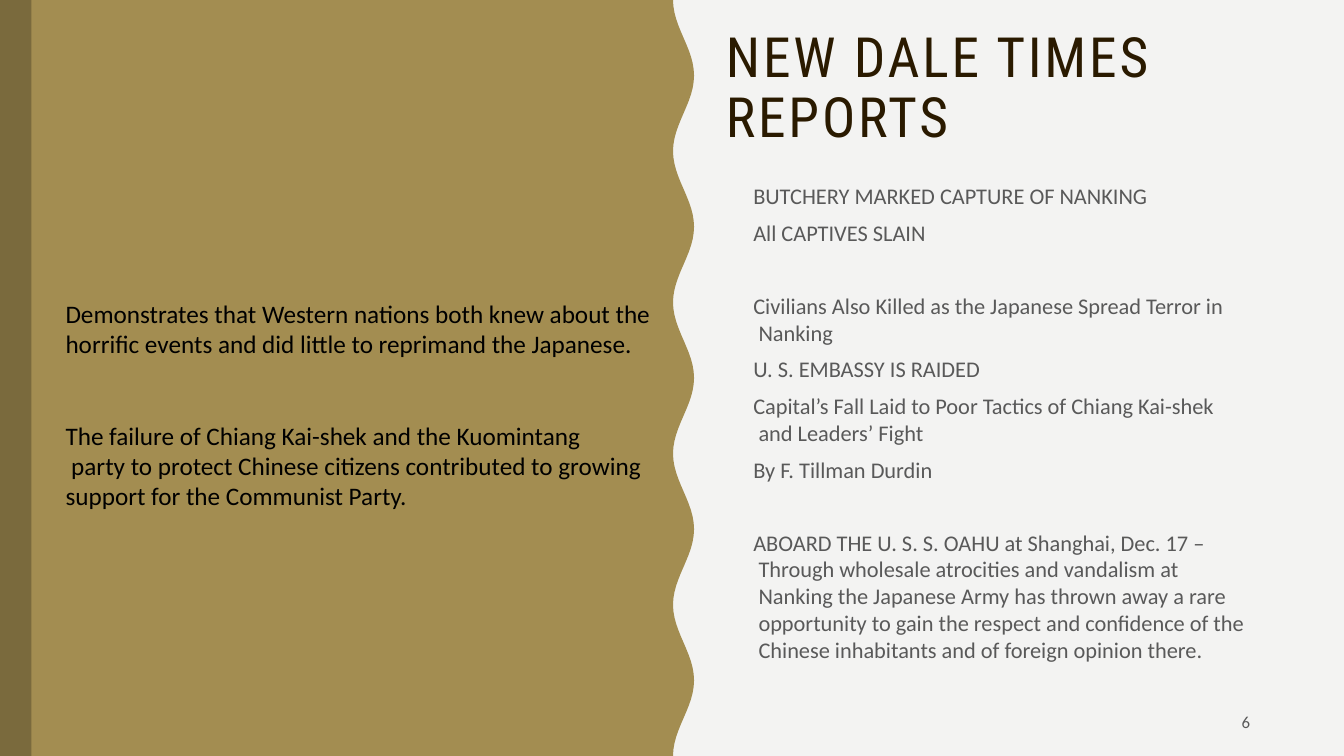
from math import cos, pi
from pptx import Presentation
from pptx.dml.color import RGBColor
from pptx.enum.shapes import MSO_SHAPE
from pptx.enum.text import MSO_ANCHOR, PP_ALIGN
from pptx.util import Pt

SCALE = 9525
WIDE, HIGH = 1280, 720
PAPER, GOLD, BROWN = "F3F3F2", "A38D51", "7A6A3D"
INK, GREY, BLACK = "2A1A00", "595959", "000000"


def px(size):
    return round(size * SCALE)


def tint(code):
    return RGBColor.from_string(code)


class Deck:
    font = "Calibri"

    def __init__(self):
        self.show = Presentation()
        self.show.slide_width = px(WIDE)
        self.show.slide_height = px(HIGH)
        self.slide = self.show.slides.add_slide(self.show.slide_layouts[6])
        back = self.slide.background.fill
        back.solid()
        back.fore_color.rgb = tint(PAPER)

    def paint(self, shape, color):
        shape.shadow.inherit = False
        shape.fill.solid()
        shape.fill.fore_color.rgb = tint(color)
        shape.line.fill.background()

    def rect(self, left, top, width, height, color):
        shape = self.slide.shapes.add_shape(
            MSO_SHAPE.RECTANGLE, px(left), px(top), px(width), px(height))
        self.paint(shape, color)

    def wave(self, low, high, count, step, color):
        span = HIGH / count
        edge = []
        for y in range(0, HIGH + 1, step):
            swing = (1 - cos(2 * pi * y / span)) / 2
            edge.append((px(low + (high - low) * swing), px(y)))
        path = self.slide.shapes.build_freeform(0, 0)
        path.add_line_segments(edge + [(0, px(HIGH))], close=True)
        self.paint(path.convert_to_shape(), color)

    def text(self, left, top, width, height, lines, size, color, font=None,
             anchor=MSO_ANCHOR.MIDDLE, align=PP_ALIGN.LEFT, after=0,
             lead=1.0, hang=0, track=0):
        box = self.slide.shapes.add_textbox(
            px(left), px(top), px(width), px(height))
        frame = box.text_frame
        frame.word_wrap = True
        frame.vertical_anchor = anchor
        for spot, (words, before) in enumerate(lines):
            para = frame.paragraphs[0] if spot == 0 else frame.add_paragraph()
            para.alignment = align
            para.line_spacing = lead
            para.space_before = Pt(before)
            para.space_after = Pt(after)
            if hang:
                props = para._p.get_or_add_pPr()
                props.set("marL", str(px(hang)))
                props.set("indent", str(-px(hang)))
            run = para.add_run()
            run.text = words
            run.font.name = font or self.font
            run.font.size = Pt(size)
            run.font.color.rgb = tint(color)
            if track:
                run._r.get_or_add_rPr().set("spc", str(track * 100))

    def save(self):
        self.show.save("out.pptx")


def main():
    deck = Deck()
    deck.wave(641, 661, 5, 6, GOLD)
    deck.rect(0, 0, 30, HIGH, BROWN)
    deck.text(682, 15, 585, 140, [("NEW DALE TIMES REPORTS", 0)], 39.6, INK,
              font="Roboto Condensed", lead=0.9, track=2)
    gap, rest = 7, 33
    news = [
        ("BUTCHERY MARKED CAPTURE OF NANKING", gap),
        ("All CAPTIVES SLAIN", gap),
        ("Civilians Also Killed as the Japanese Spread Terror in Nanking", rest),
        ("U. S. EMBASSY IS RAIDED", gap),
        ("Capital’s Fall Laid to Poor Tactics of Chiang Kai-shek "
         "and Leaders’ Fight", gap),
        ("By F. Tillman Durdin", gap),
        ("ABOARD THE U. S. S. OAHU at Shanghai, Dec. 17 – Through wholesale "
         "atrocities and vandalism at Nanking the Japanese Army has thrown "
         "away a rare opportunity to gain the respect and confidence of the "
         "Chinese inhabitants and of foreign opinion there.", rest),
    ]
    deck.text(708, 163, 492, 479, news, 16, GREY, hang=5)
    deck.text(1055, 669, 145, 36, [("6", 0)], 12, GREY,
              align=PP_ALIGN.RIGHT, after=6)
    notes = [
        ("Demonstrates that Western nations both knew about the horrific "
         "events and did little to reprimand the Japanese.", 0),
        ("The failure of Chiang Kai-shek and the Kuomintang", 44),
        (" party to protect Chinese citizens contributed to growing support "
         "for the Communist Party.", 0),
    ]
    deck.text(53, 279, 602, 213, notes, 18, BLACK, anchor=MSO_ANCHOR.TOP)
    deck.save()


if __name__ == "__main__":
    main()
